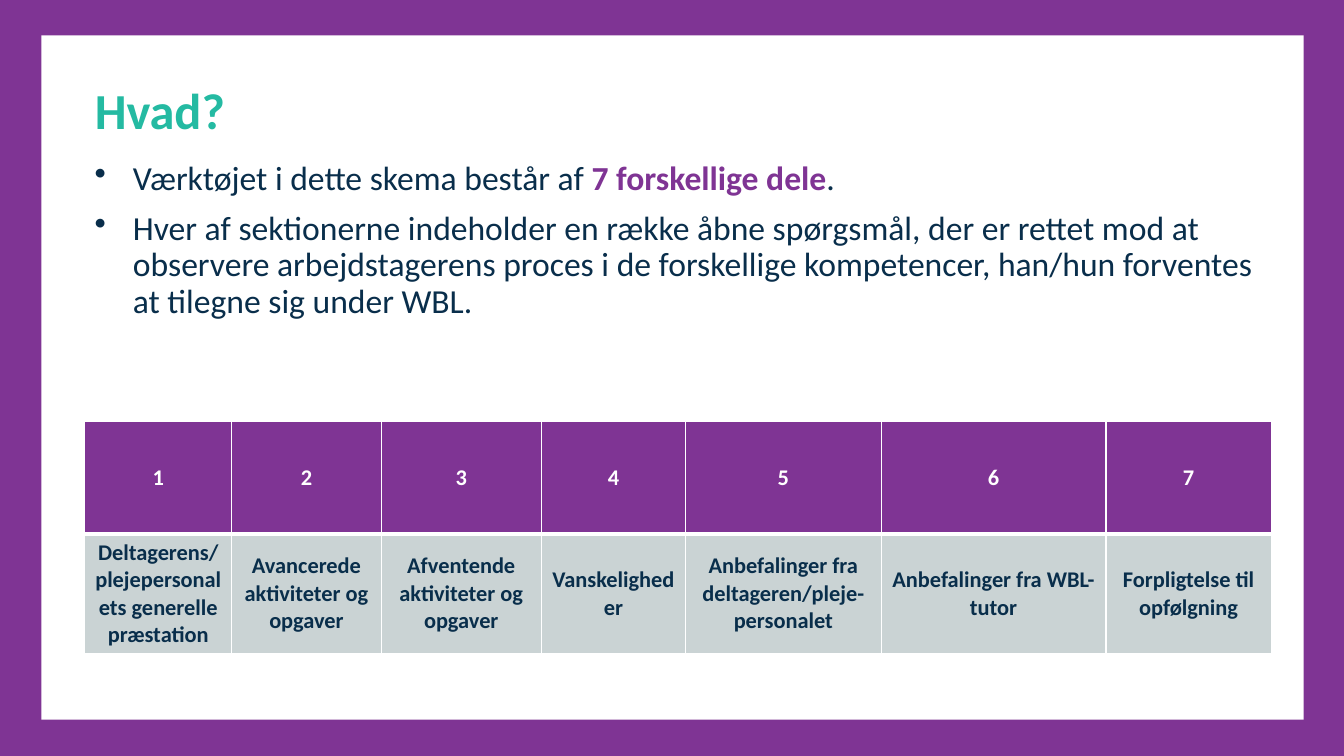
from lxml.etree import SubElement
from pptx import Presentation
from pptx.dml.color import RGBColor
from pptx.enum.shapes import MSO_SHAPE
from pptx.enum.text import MSO_ANCHOR, MSO_AUTO_SIZE, PP_ALIGN
from pptx.oxml.ns import qn
from pptx.util import Inches, Pt

PURPLE, TEAL, NAVY, GREY, WHITE = "7F3494", "24BAA2", "092E4B", "CAD3D4", "FFFFFF"
WIDTHS = [1.46, 1.48, 1.59, 1.43, 1.94, 2.23, 1.64]
PARTS = [
    "Deltagerens/plejepersonalets generelle præstation",
    "Avancerede aktiviteter og opgaver",
    "Afventende aktiviteter og opgaver",
    "Vanskeligheder",
    "Anbefalinger fra deltageren/pleje-personalet",
    "Anbefalinger fra WBL-tutor",
    "Forpligtelse til opfølgning",
]
POINTS = [
    [("Værktøjet i dette skema består af ", False), ("7 forskellige dele", True), (".", False)],
    [("Hver af sektionerne indeholder en række åbne spørgsmål, der er rettet mod at "
      "observere arbejdstagerens proces i de forskellige kompetencer, han/hun forventes "
      "at tilegne sig under WBL.", False)],
]


def paint(target, color):
    if hasattr(target, "solid"):
        target.solid()
        target = target.fore_color
    else:
        target = target.color
    target.rgb = RGBColor.from_string(color)


class Deck:
    """Holds the style and the current slide."""

    def __init__(self):
        self.prs = Presentation()
        self.prs.slide_width, self.prs.slide_height = Inches(13.33), Inches(7.5)
        self.slide = self.prs.slides.add_slide(self.prs.slide_layouts[5])
        self.face = "Calibri"

    def style(self, para, size, color, bold=None):
        para.font.name, para.font.size, para.font.bold = self.face, Pt(size), bold
        paint(para.font, color)

    def panel(self, box, color):
        shape = self.slide.shapes.add_shape(MSO_SHAPE.RECTANGLE, *map(Inches, box))
        shape.shadow.inherit = False
        paint(shape.fill, color)
        shape.line.fill.background()

    def title(self, text, box):
        shape = self.slide.shapes.title
        shape.left, shape.top, shape.width, shape.height = map(Inches, box)
        frame = shape.text_frame
        frame.text = text
        frame.auto_size, frame.vertical_anchor = MSO_AUTO_SIZE.NONE, MSO_ANCHOR.TOP
        para = frame.paragraphs[0]
        para.alignment, para.line_spacing = PP_ALIGN.LEFT, 0.9
        self.style(para, 36, TEAL, True)

    def bullets(self, points, box):
        frame = self.slide.shapes.add_textbox(*map(Inches, box)).text_frame
        frame.word_wrap = True
        for i, runs in enumerate(points):
            para = frame.add_paragraph() if i else frame.paragraphs[0]
            para.line_spacing, para.space_before = 0.9, Pt(10)
            self.style(para, 24, NAVY)
            props = para._p.get_or_add_pPr()
            props.set("marL", str(Inches(0.38)))
            props.set("indent", str(Inches(-0.38)))
            mark = props.makeelement(qn("a:buChar"), {"char": "•"})
            props.find(qn("a:defRPr")).addprevious(mark)
            for text, strong in runs:
                run = para.add_run()
                run.text = text
                if strong:
                    run.font.bold = True
                    paint(run.font, PURPLE)

    def border(self, cell, side, width):
        line = SubElement(cell._tc.get_or_add_tcPr(), qn("a:" + side), w=str(Pt(width)))
        fill = SubElement(line, qn("a:solidFill"))
        SubElement(fill, qn("a:srgbClr"), val=WHITE)

    def table(self, rows, widths, heights, left, top):
        size = Inches(sum(widths)), Inches(sum(heights))
        table = self.slide.shapes.add_table(
            len(rows), len(widths), Inches(left), Inches(top), *size).table
        for col, width in zip(table.columns, widths):
            col.width = Inches(width)
        for r, (texts, fill, ink) in enumerate(rows):
            table.rows[r].height = Inches(heights[r])
            for c, text in enumerate(texts):
                cell = table.cell(r, c)
                for side in ("lnL", "lnR", "lnT", "lnB"):
                    self.border(cell, side, 3 if side == ("lnT" if r else "lnB") else 1)
                paint(cell.fill, fill)
                cell.vertical_anchor = MSO_ANCHOR.MIDDLE
                cell.text = text
                para = cell.text_frame.paragraphs[0]
                para.alignment = PP_ALIGN.CENTER
                self.style(para, 16, ink, True)


def main():
    deck = Deck()
    deck.panel((0, 0, 13.33, 7.5), PURPLE)
    deck.panel((0.41, 0.35, 12.52, 6.79), WHITE)
    tree = deck.slide.shapes._spTree
    tree.append(deck.slide.shapes.title._element)
    deck.title("Hvad?", (0.84, 0.8, 11.59, 0.49))
    deck.bullets(POINTS, (0.84, 1.55, 11.87, 2.37))
    numbers = [str(n) for n in range(1, len(PARTS) + 1)]
    rows = [(numbers, PURPLE, WHITE), (PARTS, GREY, NAVY)]
    deck.table(rows, WIDTHS, [1.12, 1.18], 0.84, 4.18)
    deck.prs.save("out.pptx")


if __name__ == "__main__":
    main()
